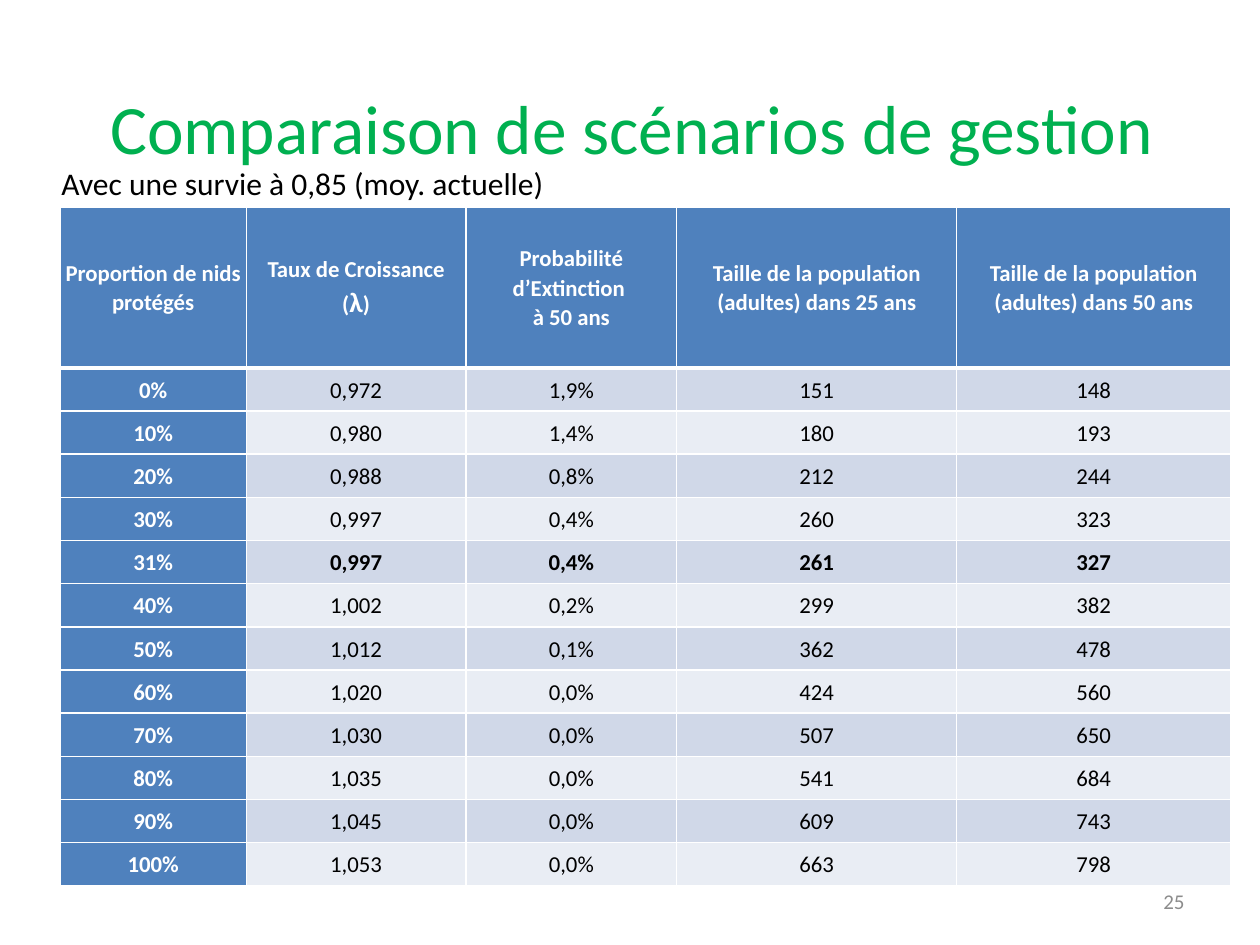
from dataclasses import dataclass

from lxml import etree
from pptx import Presentation
from pptx.dml.color import RGBColor
from pptx.enum.text import MSO_ANCHOR, PP_ALIGN
from pptx.oxml.ns import qn
from pptx.util import Pt

LEFT, CENTER, RIGHT = PP_ALIGN.LEFT, PP_ALIGN.CENTER, PP_ALIGN.RIGHT
TOP, MIDDLE = MSO_ANCHOR.TOP, MSO_ANCHOR.MIDDLE


@dataclass(frozen=True)
class Theme:
    font: str = "Calibri"
    title: str = "00B050"
    ink: str = "000000"
    page_number: str = "8C8C8C"
    header: str = "4F81BD"
    header_ink: str = "FFFFFF"
    bands: tuple = ("D0D8E8", "E9EDF4")
    border: str = "FFFFFF"
    title_size: float = 39.6
    subtitle_size: float = 18
    cell_size: float = 13
    symbol_size: float = 16
    page_number_size: float = 12


class SlideBuilder:
    def __init__(self, slide, theme):
        self.slide = slide
        self.theme = theme

    def style(self, paragraph, size, color, align, bold=False):
        paragraph.alignment = align
        font = paragraph.font
        font.name, font.size, font.bold = self.theme.font, Pt(size), bold
        font.color.rgb = RGBColor.from_string(color)

    def text(self, words, box, size, color, align=LEFT, anchor=TOP):
        frame = self.slide.shapes.add_textbox(*map(Pt, box)).text_frame
        frame.word_wrap = True
        frame.vertical_anchor = anchor
        paragraph = frame.paragraphs[0]
        paragraph.text = words
        self.style(paragraph, size, color, align)

    def borders(self, cell, bottom_width):
        properties = cell._tc.get_or_add_tcPr()
        for side in "LRTB":
            width = bottom_width if side == "B" else 1
            line = etree.SubElement(properties, qn(f"a:ln{side}"), w=str(Pt(width)))
            fill = etree.SubElement(line, qn("a:solidFill"))
            etree.SubElement(fill, qn("a:srgbClr"), val=self.theme.border)

    def cell(self, cell, words, fill, color, bold, bottom_width=1):
        """Fill one cell; words is a string, or (before, enlarged symbol, after)."""
        cell.margin_left = cell.margin_right = Pt(3)
        cell.margin_top = cell.margin_bottom = Pt(0)
        cell.vertical_anchor = MIDDLE
        self.borders(cell, bottom_width)
        cell.fill.solid()
        cell.fill.fore_color.rgb = RGBColor.from_string(fill)
        paragraph = cell.text_frame.paragraphs[0]
        before, *rest = [words] if isinstance(words, str) else words
        paragraph.text = before
        for part, size in zip(rest, (self.theme.symbol_size, self.theme.cell_size)):
            run = paragraph.add_run()
            run.text = part
            run.font.size = Pt(size)
        paragraph.line_spacing = 1.07
        self.style(paragraph, self.theme.cell_size, color, CENTER, bold)

    def table(self, headers, rows, highlighted, origin, widths, header_height, row_height):
        theme = self.theme
        height = header_height + row_height * len(rows)
        table = self.slide.shapes.add_table(
            len(rows) + 1, len(headers), *map(Pt, (*origin, sum(widths), height))
        ).table
        table.first_row = table.horz_banding = False
        for column, width in zip(table.columns, widths):
            column.width = Pt(width)
        for index, row in enumerate(table.rows):
            row.height = Pt(row_height if index else header_height)
        for column, words in enumerate(headers):
            self.cell(table.cell(0, column), words, theme.header, theme.header_ink, True, 3)
        for index, (label, *values) in enumerate(rows):
            self.cell(table.cell(index + 1, 0), label, theme.header, theme.header_ink, True)
            for column, value in enumerate(values, 1):
                self.cell(table.cell(index + 1, column), value, theme.bands[index % 2],
                          theme.ink, label == highlighted)


HEADERS = [
    "Proportion de nids protégés",
    ("Taux de Croissance\v(", "λ", ")"),
    "Probabilité d’Extinction \và 50 ans",
    "Taille de la population (adultes) dans 25 ans",
    "Taille de la population (adultes) dans 50 ans",
]
SCENARIOS = [
    ("0%", "0,972", "1,9%", "151", "148"),
    ("10%", "0,980", "1,4%", "180", "193"),
    ("20%", "0,988", "0,8%", "212", "244"),
    ("30%", "0,997", "0,4%", "260", "323"),
    ("31%", "0,997", "0,4%", "261", "327"),
    ("40%", "1,002", "0,2%", "299", "382"),
    ("50%", "1,012", "0,1%", "362", "478"),
    ("60%", "1,020", "0,0%", "424", "560"),
    ("70%", "1,030", "0,0%", "507", "650"),
    ("80%", "1,035", "0,0%", "541", "684"),
    ("90%", "1,045", "0,0%", "609", "743"),
    ("100%", "1,053", "0,0%", "663", "798"),
]


def main():
    presentation = Presentation()
    presentation.slide_width, presentation.slide_height = Pt(720), Pt(540)
    theme = Theme()
    builder = SlideBuilder(
        presentation.slides.add_slide(presentation.slide_layouts[6]), theme)
    builder.text("Comparaison de scénarios de gestion", (36, 21.6, 650, 101.5),
                 theme.title_size, theme.title, CENTER, MIDDLE)
    builder.table(HEADERS, SCENARIOS, "31%", origin=(34.2, 118.2),
                  widths=(106.5, 125.5, 120.5, 160, 156.5),
                  header_height=92, row_height=24.67)
    builder.text("Avec une survie à 0,85 (moy. actuelle)", (28, 90, 358, 29),
                 theme.subtitle_size, theme.ink)
    builder.text("25", (516, 500.5, 168, 28.8), theme.page_number_size,
                 theme.page_number, RIGHT, MIDDLE)
    presentation.save("out.pptx")


if __name__ == "__main__":
    main()
